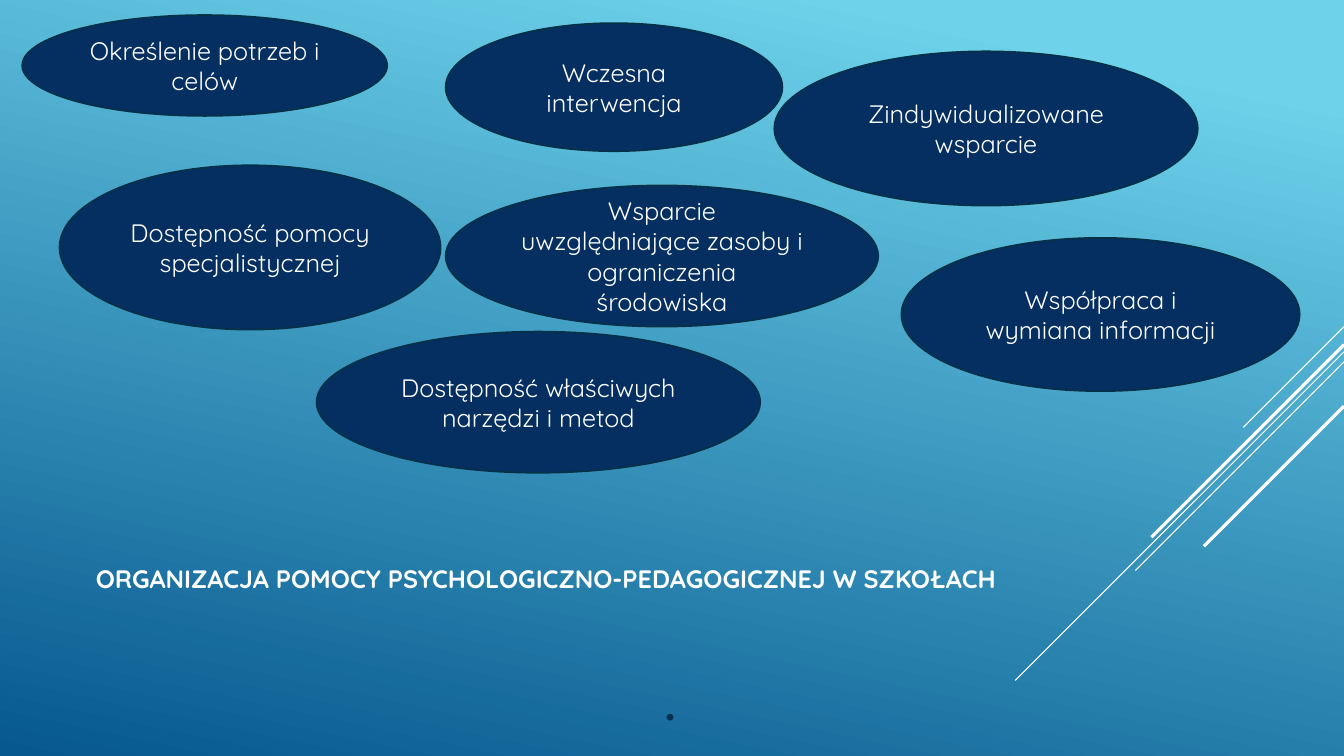
from lxml.etree import SubElement
from pptx import Presentation
from pptx.dml.color import RGBColor
from pptx.enum.shapes import MSO_CONNECTOR, MSO_SHAPE
from pptx.enum.text import MSO_ANCHOR, PP_ALIGN
from pptx.oxml.ns import qn
from pptx.util import Inches, Pt

WIDE, HIGH = 13.33, 7.5
HUES = {"sky": "6ED2EB", "sea": "06588E", "navy": "052F61",
        "edge": "043148", "white": "FFFFFF"}
FONT = {"name": "Quicksand", "size": Pt(18), "bold": False}
FRAME = {"word_wrap": True, "vertical_anchor": MSO_ANCHOR.MIDDLE}

TITLE = "ORGANIZACJA POMOCY PSYCHOLOGICZNO-PEDAGOGICZNEJ W SZKOŁACH"

# Left, top, width, height, text
OVALS = [
    (7.68, 0.51, 4.2, 1.53, "Zindywidualizowane wsparcie"),
    (0.59, 1.64, 3.78, 1.63, "Dostępność pomocy specjalistycznej"),
    (4.42, 1.84, 4.29, 1.4,
     "Wsparcie uwzględniające zasoby i ograniczenia środowiska"),
    (4.42, 0.23, 3.34, 1.27, "Wczesna interwencja"),
    (8.94, 2.36, 3.95, 1.52, "Współpraca i wymiana informacji"),
    (3.14, 3.29, 4.4, 1.4, "Dostępność właściwych narzędzi i metod"),
    (6.62, 7.09, 0.05, 0.05, ""),
    (0.22, 0.15, 3.62, 1, "Określenie potrzeb i celów"),
]

# Top on the right edge, run to the left and down, line width
RAYS = [(3.24, 1, 0.75), (3.49, 3.26, 0.75), (3.59, 2.07, 0.75),
        (3.42, 1.91, 2.25), (4.03, 1.39, 2.25)]


def hue(name):
    return RGBColor.from_string(HUES[name])


def apply(item, values):
    for key, value in values.items():
        setattr(item, key, value)


def paint(slide):
    fill = slide.background.fill
    fill.gradient()
    fill.gradient_angle = 360 - 102
    for stop, name, place in zip(fill.gradient_stops, ("sky", "sea"), (0.1, 1)):
        stop.color.rgb = hue(name)
        stop.position = place


def write(shape, text, **extra):
    frame = shape.text_frame
    apply(frame, FRAME)
    para = frame.paragraphs[0]
    para.alignment = PP_ALIGN.CENTER
    run = para.add_run()
    run.text = text
    apply(run.font, {**FONT, **extra})
    run.font.color.rgb = hue("white")


def add_ray(slide, top, size, width):
    ends = map(Inches, (WIDE, top, WIDE - size, top + size))
    ray = slide.shapes.add_connector(MSO_CONNECTOR.STRAIGHT, *ends)
    ray.line.color.rgb = hue("white")
    ray.line.width = Pt(width)
    SubElement(ray.element.spPr, qn("a:effectLst"))


def add_title(slide, text, *box):
    write(slide.shapes.add_textbox(*map(Inches, box)), text, bold=True)


def add_oval(slide, *box, text):
    oval = slide.shapes.add_shape(MSO_SHAPE.OVAL, *map(Inches, box))
    oval.shadow.inherit = False
    oval.fill.solid()
    oval.fill.fore_color.rgb = hue("navy")
    oval.line.color.rgb = hue("edge")
    oval.line.width = Pt(1.25)
    if text:
        write(oval, text)


def main():
    deck = Presentation()
    apply(deck, {"slide_width": Inches(WIDE), "slide_height": Inches(HIGH)})
    slide = deck.slides.add_slide(deck.slide_layouts[6])

    # Backdrop
    paint(slide)
    for ray in RAYS:
        add_ray(slide, *ray)

    # Title and topics
    add_title(slide, TITLE, 0.75, 4.91, 9.33, 1.65)
    for *box, text in OVALS:
        add_oval(slide, *box, text=text)

    deck.save("out.pptx")


if __name__ == "__main__":
    main()
